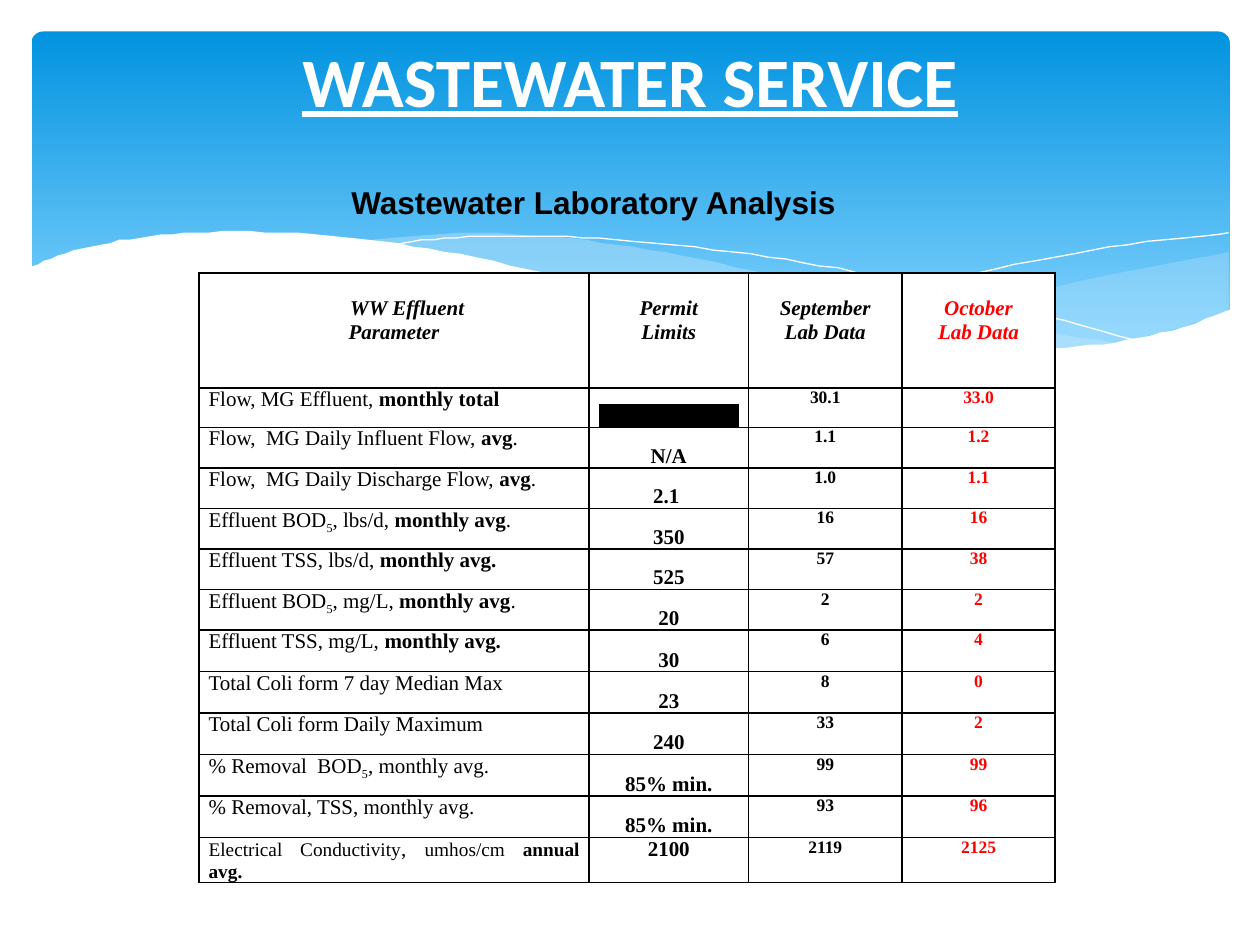
from dataclasses import dataclass
from typing import Optional

from pptx import Presentation
from pptx.dml.color import RGBColor
from pptx.enum.shapes import MSO_SHAPE
from pptx.enum.text import MSO_ANCHOR, PP_ALIGN
from pptx.oxml.ns import qn
from pptx.util import Pt
from lxml.etree import SubElement, Element

Point = tuple[float, float]
BLACK, WHITE, RED, PALE = "000000", "FFFFFF", "FF0000", "C6E7FC"
SERIF = "Times New Roman"


@dataclass
class Part:
    text: str
    bold: bool = False
    subscript: bool = False
    size: float = 12


@dataclass
class Reading:
    parameter: list[Part]
    limit: str
    september: str
    october: str


@dataclass
class Wave:
    edges: list[list[Point]]
    fill: Optional[str] = None
    opacity: int = 100


def color(code: str) -> RGBColor:
    return RGBColor.from_string(code)


def style(run, size: float, code: str, name: str = SERIF, bold=True, italic=False) -> None:
    run.font.size, run.font.name = Pt(size), name
    run.font.bold, run.font.italic = bold, italic
    run.font.color.rgb = color(code)


def smooth_curve(knots: list[Point], steps: int = 6) -> list[Point]:
    """Catmull-Rom curve through the knots; two knots stay a straight line."""
    if len(knots) == 2:
        return knots
    ends = [knots[0], *knots, knots[-1]]
    curve = [knots[0]]
    for a, b, c, d in zip(ends, ends[1:], ends[2:], ends[3:]):
        for step in range(1, steps + 1):
            t = step / steps
            curve.append(tuple(
                0.5 * (2 * q + (r - p) * t + (2 * p - 5 * q + 4 * r - s) * t**2
                       + (3 * q - p - 3 * r + s) * t**3)
                for p, q, r, s in zip(a, b, c, d)))
    return curve


def draw_wave(wave: Wave) -> None:
    points = [point for edge in wave.edges for point in smooth_curve(edge)]
    builder = slide.shapes.build_freeform(*points[0], scale=Pt(1))
    builder.add_line_segments(points[1:], close=wave.fill is not None)
    band = builder.convert_to_shape()
    band.shadow.inherit = False
    if wave.fill is None:
        band.fill.background()
        band.line.color.rgb = color(WHITE)
        band.line.width = Pt(0)
        return
    band.line.fill.background()
    band.fill.solid()
    band.fill.fore_color.rgb = color(wave.fill)
    if wave.opacity < 100:
        tint = band.fill._xPr.find(qn("a:solidFill"))[0]
        SubElement(tint, qn("a:alpha"), val=str(wave.opacity * 1000))


def add_caption(left, top, width, height, text: str, size: float, code: str, name: str):
    caption = slide.shapes.add_textbox(Pt(left), Pt(top), Pt(width), Pt(height))
    caption.text_frame.word_wrap = True
    caption.text_frame.text = text
    paragraph = caption.text_frame.paragraphs[0]
    style(paragraph.runs[0], size, code, name)
    return caption.text_frame, paragraph


def prepare_cell(cell, anchor=MSO_ANCHOR.TOP, top_margin: float = 0) -> None:
    cell.margin_left = cell.margin_right = Pt(5.4)
    cell.margin_top, cell.margin_bottom = Pt(top_margin), Pt(0)
    cell.vertical_anchor = anchor
    properties = cell._tc.get_or_add_tcPr()
    for side in ("a:lnL", "a:lnR", "a:lnT", "a:lnB"):
        border = SubElement(properties, qn(side), w=str(Pt(1)))
        SubElement(SubElement(border, qn("a:solidFill")), qn("a:srgbClr"), val=BLACK)
    cell.fill.solid()
    cell.fill.fore_color.rgb = color(WHITE)


def write_centred(cell, text: str, size: float, code: str, italic=False) -> None:
    cell.text_frame.text = text
    for paragraph in cell.text_frame.paragraphs:
        paragraph.alignment = PP_ALIGN.CENTER
        style(paragraph.runs[0], size, code, italic=italic)


def write_parameter(cell, parts: list[Part]) -> None:
    paragraph = cell.text_frame.paragraphs[0]
    paragraph.alignment = PP_ALIGN.JUSTIFY
    for part in parts:
        run = paragraph.add_run()
        run.text = part.text
        style(run, part.size, BLACK, bold=part.bold)
        if part.subscript:
            run.font._element.set("baseline", "-25000")


def highlight(run, code: str) -> None:
    marker = Element(qn("a:highlight"))
    SubElement(marker, qn("a:srgbClr"), val=code)
    run.font._element.find(qn("a:solidFill")).addnext(marker)


presentation = Presentation()
presentation.slide_width, presentation.slide_height = Pt(720), Pt(540)
slide = presentation.slides.add_slide(presentation.slide_layouts[6])

# Blue backdrop
backdrop = slide.shapes.add_shape(MSO_SHAPE.ROUNDED_RECTANGLE, Pt(18), Pt(18), Pt(684.7), Pt(194.4))
backdrop.adjustments[0] = 0.034
backdrop.shadow.inherit = False
backdrop.line.fill.background()
backdrop.fill.gradient()
backdrop.fill.gradient_angle = 270
for stop, (position, shade) in zip(backdrop.fill.gradient_stops, [(0, "0293E0"), (0.9, "83D3FE")]):
    stop.position, stop.color.rgb = position, color(shade)

# Waves, from back to front
WAVES = [
    Wave([[(702.5, 144), (620, 160.5), (542, 178.5), (476, 190.8)],
          [(476, 190.8), (527, 197.3), (586, 200), (640, 195.8), (702.5, 177.8)]], PALE, 29),
    Wave([[(643, 196.6), (581, 187.2), (508.3, 172.8), (452.9, 159.8), (389.5, 146.2),
           (334.8, 137.5), (273.6, 133.2), (206, 137.5)],
          [(206, 137.5), (275.8, 149), (323.3, 159.8), (407.5, 178.6), (478.8, 191.5),
           (538.6, 198.7), (596, 200.2), (643, 196.6)]], PALE, 40),
    Wave([[(222.5, 140.4), (254.2, 136.1), (299.5, 134.6), (352, 136.8), (419, 144),
           (478.8, 153.4), (547.2, 167.8), (598.3, 180.7), (653, 195.8)]]),
    Wave([[(441.4, 185), (500.4, 169.2), (580.3, 151.2), (644.4, 139.7), (702, 133.2)]]),
    Wave([[(703.4, 177.1), (669.6, 188.6), (630, 196.6), (582.5, 199.4), (522.7, 195.8),
           (450.7, 185.8), (380.9, 172.1), (321.8, 158.4), (262.8, 145.4), (210.2, 136.8),
           (152, 132.5), (105, 133.2), (68.4, 137.5), (37.4, 144.7), (16.6, 153.4)],
          [(16.6, 236.9), (703.4, 236.9)]], WHITE),
]
for wave in WAVES:
    draw_wave(wave)

# Laboratory table
HEADINGS = ["WW Effluent\nParameter", "Permit\nLimits", "September\nLab Data", "October\nLab Data"]
five = Part("5", subscript=True)
average = [Part("monthly avg", True), Part(".")]
average_bold = Part("monthly avg.", True)
READINGS = [
    Reading([Part("Flow, MG Effluent, "), Part("monthly total", True)], "-" * 20, "30.1", "33.0"),
    Reading([Part("Flow,  MG Daily Influent Flow, "), Part("avg", True), Part(".")], "N/A", "1.1", "1.2"),
    Reading([Part("Flow,  MG Daily Discharge Flow, "), Part("avg", True), Part(". ")], "2.1 ", "1.0", "1.1"),
    Reading([Part("Effluent BOD"), five, Part(", lbs/d, "), *average], "350", "16", "16"),
    Reading([Part("Effluent TSS, lbs/d, "), average_bold], "525", "57", "38"),
    Reading([Part("Effluent BOD"), five, Part(", mg/L, "), *average], "20", "2", "2"),
    Reading([Part("Effluent TSS, mg/L, "), average_bold], "30", "6", "4"),
    Reading([Part("Total Coli form 7 day Median Max")], "23", "8", "0"),
    Reading([Part("Total Coli form Daily Maximum")], "240", "33", "2"),
    Reading([Part("% Removal  BOD"), five, Part(", monthly avg.")], "85% min.", "99", "99"),
    Reading([Part("% Removal, TSS, monthly avg.")], "85% min.", "93", "96"),
    Reading([Part("Electrical Conductivity", size=11), Part(", "), Part("umhos/cm ", size=11),
             Part("annual avg.", True, size=11)], "2100", "2119", "2125"),
]
WIDTHS = [222.8, 91.2, 87.6, 87.6]
HEIGHTS = [65.7, 22.5] + [23.2] * 5 + [23.7] * 5 + [25.4]

lab = slide.shapes.add_table(len(HEIGHTS), len(WIDTHS), Pt(113.8), Pt(156),
                             Pt(sum(WIDTHS)), Pt(sum(HEIGHTS))).table
lab.first_row = lab.horz_banding = False
for column, width in zip(lab.columns, WIDTHS):
    column.width = Pt(width)
for row, height in zip(lab.rows, HEIGHTS):
    row.height = Pt(height)

for index, heading in enumerate(HEADINGS):
    prepare_cell(lab.cell(0, index), top_margin=13.8)
    write_centred(lab.cell(0, index), heading, 12, RED if index == 3 else BLACK, italic=True)
lab.cell(0, 0).text_frame.paragraphs[0]._p.get_or_add_pPr().set("marL", str(Pt(15)))

for number, reading in enumerate(READINGS, start=1):
    parameter, limit, september, october = lab.rows[number].cells
    limit_anchor = MSO_ANCHOR.TOP if number == len(READINGS) else MSO_ANCHOR.BOTTOM
    for cell in (parameter, september, october):
        prepare_cell(cell)
    prepare_cell(limit, limit_anchor)
    write_parameter(parameter, reading.parameter)
    write_centred(limit, reading.limit, 12, BLACK)
    write_centred(september, reading.september, 10, BLACK)
    write_centred(october, reading.october, 10, RED)
highlight(lab.cell(1, 1).text_frame.paragraphs[0].runs[0], BLACK)

# Title and subtitle
title_frame, title = add_caption(36, 21.6, 648, 86.4, "WASTEWATER SERVICE", 39.6, WHITE, "Calibri")
title_frame.margin_top = Pt(0)
title.alignment = PP_ALIGN.CENTER
title.runs[0].font.underline = True
_, subtitle = add_caption(168.5, 100.8, 426.2, 28.8, "Wastewater Laboratory Analysis", 18, BLACK, "Arial")
subtitle._p.get_or_add_pPr().set("indent", str(Pt(25.2)))

presentation.save("out.pptx")
